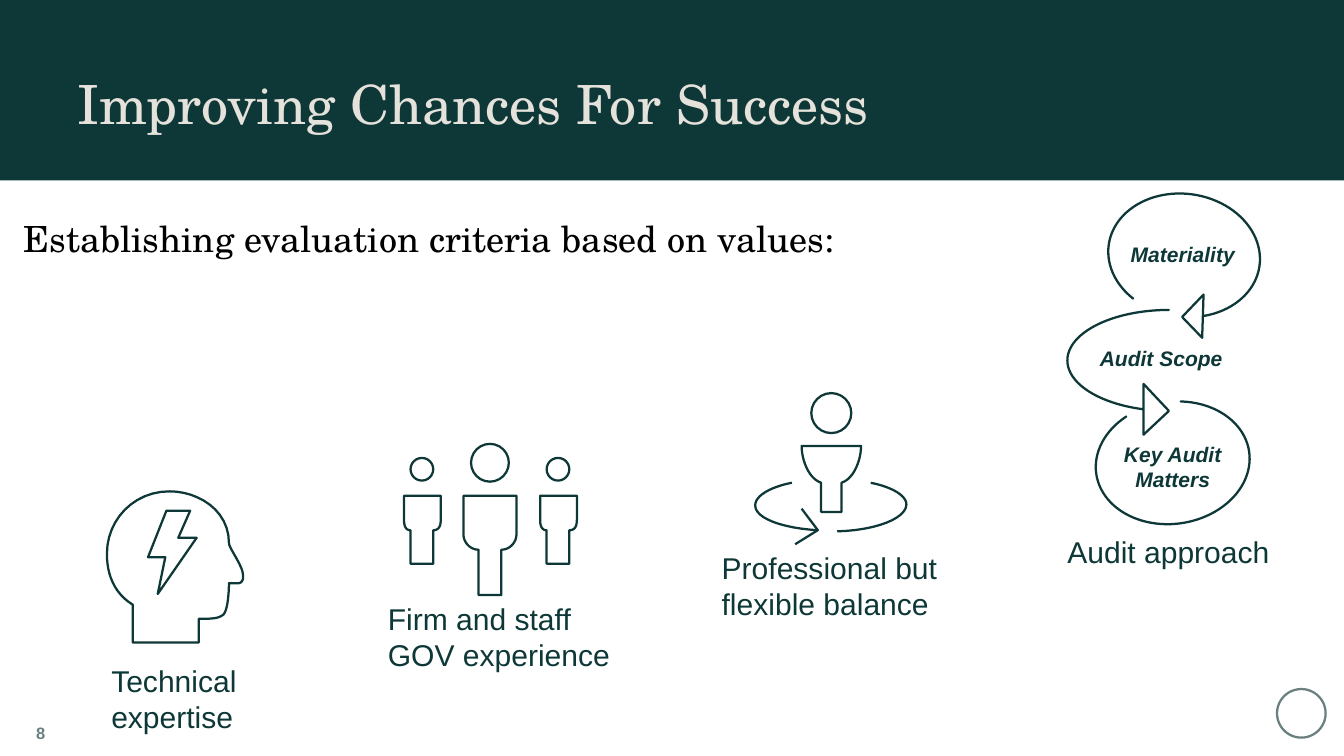
from dataclasses import dataclass, field

import pptx
import pptx.dml.color
import pptx.enum.shapes
import pptx.enum.text
import pptx.util

Inches = pptx.util.Inches
Pt = pptx.util.Pt
Preset = pptx.enum.shapes.MSO_SHAPE
Align = pptx.enum.text.PP_ALIGN
Anchor = pptx.enum.text.MSO_ANCHOR

GREEN, WHITE, GREY = "0E3837", "FFFFFF", "6A8080"
SERIF, SANS = "TeX Gyre Schola", "Arial"
CURVE_STEPS = 12


@dataclass
class Label:
    text: str
    frame: tuple[float, float, float, float]
    font: dict = field(default_factory=dict)
    color: str = GREEN
    paragraph: dict = field(default_factory=dict)
    anchor: Anchor = Anchor.TOP


@dataclass
class Outline:
    start: tuple[float, float]
    steps: list[tuple[float, ...]]
    closed: bool = True
    shift: float = 0


@dataclass
class Arrow:
    preset: Preset
    frame: tuple[float, float, float, float]
    adjustments: list[float]
    rotation: float = 0


def rgb(value: str) -> pptx.dml.color.RGBColor:
    return pptx.dml.color.RGBColor.from_string(value)


def apply(target, values: dict) -> None:
    for name, value in values.items():
        setattr(target, name, value)


def style(shape, fill: str | None, line: str | None, width: float = 1.5) -> None:
    shape.shadow.inherit = False
    if fill:
        shape.fill.solid()
        shape.fill.fore_color.rgb = rgb(fill)
    else:
        shape.fill.background()
    if line:
        shape.line.color.rgb = rgb(line)
        shape.line.width = Pt(width)
    else:
        shape.line.fill.background()


def draw_preset(page, preset: Preset, frame: tuple, fill: str | None,
                line: str | None, width: float = 1.5):
    shape = page.shapes.add_shape(preset, *map(Inches, frame))
    style(shape, fill, line, width)
    return shape


def draw_label(page, label: Label) -> None:
    box = page.shapes.add_textbox(*map(Inches, label.frame))
    margins = {f"margin_{side}": 0 for side in ("left", "top", "right", "bottom")}
    apply(box.text_frame, margins | {"word_wrap": True, "vertical_anchor": label.anchor})
    paragraph = box.text_frame.paragraphs[0]
    apply(paragraph, label.paragraph)
    span = paragraph.add_run()
    span.text = label.text
    apply(span.font, label.font)
    span.font.color.rgb = rgb(label.color)


def curve(start: tuple, step: tuple) -> list[tuple[float, float]]:
    points = [start, step[:2], step[2:4], step[4:]]
    result = []
    for index in range(1, CURVE_STEPS + 1):
        t = index / CURVE_STEPS
        weights = ((1 - t) ** 3, 3 * t * (1 - t) ** 2, 3 * t * t * (1 - t), t ** 3)
        result.append(tuple(sum(w * p[axis] for w, p in zip(weights, points))
                            for axis in (0, 1)))
    return result


def draw_outline(page, outline: Outline) -> None:
    points = [outline.start]
    for step in outline.steps:
        points += [step] if len(step) == 2 else curve(points[-1], step)
    scaled = [(Inches(x + outline.shift), Inches(y)) for x, y in points]
    builder = page.shapes.build_freeform(*scaled[0], scale=1.0)
    builder.add_line_segments(scaled[1:], close=outline.closed)
    style(builder.convert_to_shape(), None, GREEN)


def draw_arrow(page, arrow: Arrow) -> None:
    shape = draw_preset(page, arrow.preset, arrow.frame, WHITE, GREEN)
    for index, value in enumerate(arrow.adjustments):
        shape.adjustments[index] = value
    shape.rotation = arrow.rotation


CAPTION = {"size": Pt(20), "name": SANS}
LOOP_TEXT = {"size": Pt(14), "name": SANS, "bold": True, "italic": True}
SPACED = {"space_after": Pt(4)}

LABELS = [
    Label("Establishing evaluation criteria based on values:", (0.22, 2, 11.51, 0.58),
          {"size": Pt(24), "name": SERIF}, "000000",
          {"space_before": Pt(18), "space_after": Pt(12)}),
    Label("Improving Chances For Success", (0.72, 0.5, 11, 0.75),
          {"size": Pt(36), "name": SERIF}, "E5E1DB", anchor=Anchor.BOTTOM),
    Label("8", (0, 6.58, 0.42, 0.42), {"size": Pt(11), "name": SANS, "bold": True},
          GREY, {"alignment": Align.RIGHT}, Anchor.MIDDLE),
    Label("Technical expertise", (1.03, 6.13, 1.19, 0.66), CAPTION, paragraph=SPACED),
    Label("Firm and staff GOV experience", (3.59, 5.56, 2.26, 0.79), CAPTION,
          paragraph=SPACED),
    Label("Professional but flexible balance", (6.68, 5.09, 2.22, 0.76), CAPTION,
          paragraph=SPACED),
    Label("Audit approach", (9.88, 4.94, 1.97, 0.64), CAPTION, paragraph=SPACED),
]

LOOP_LABELS = [
    Label("Materiality", (10.02, 2.24, 1.41, 0.27), LOOP_TEXT,
          paragraph=SPACED | {"alignment": Align.RIGHT}),
    Label("Audit Scope", (10.18, 3.2, 1.41, 0.27), LOOP_TEXT, paragraph=SPACED),
    Label("Key Audit Matters", (10.15, 4.09, 1.41, 0.27), LOOP_TEXT,
          paragraph=SPACED | {"alignment": Align.CENTER}),
]

THINKER = [
    Outline((2.12, 5.03), [
        (2.12, 4.72, 1.83, 4.55, 1.57, 4.55), (1.24, 4.55, 0.99, 4.81, 0.99, 5.13),
        (0.99, 5.31, 1.05, 5.49, 1.23, 5.6), (1.23, 5.95), (1.84, 5.95), (1.84, 5.73),
        (1.96, 5.73, 2.02, 5.73, 2.07, 5.69), (2.12, 5.63, 2.12, 5.4, 2.12, 5.4),
        (2.12, 5.4, 2.17, 5.4, 2.21, 5.4), (2.22, 5.4, 2.24, 5.39, 2.24, 5.38),
        (2.25, 5.37, 2.25, 5.36, 2.25, 5.34), (2.26, 5.25, 2.12, 5.08, 2.12, 5.03)]),
    Outline((1.54, 4.73), [(1.76, 4.73), (1.65, 4.98), (1.82, 4.98), (1.46, 5.5),
                           (1.53, 5.16), (1.37, 5.16)]),
]

COLLEAGUE_GAP = 1.26
COLLEAGUE = [(3.74, 4.81), (3.74, 4.86, 3.75, 4.91, 3.8, 4.91), (3.8, 5.22),
             (4.01, 5.22), (4.01, 4.91), (4.07, 4.91, 4.08, 4.86, 4.08, 4.81),
             (4.08, 4.59)]
TEAM = [Outline((3.74, 4.59), COLLEAGUE, shift=shift) for shift in (0, COLLEAGUE_GAP)] + [
    Outline((4.29, 4.59), [
        (4.78, 4.59), (4.78, 4.95), (4.78, 5.02, 4.72, 5.09, 4.64, 5.09), (4.64, 5.51),
        (4.43, 5.51), (4.43, 5.09), (4.35, 5.09, 4.29, 5.02, 4.29, 4.95)]),
]

BALANCE = [
    Outline((7.97, 4.13), [
        (7.42, 4.13), (7.42, 4.25, 7.48, 4.43, 7.6, 4.47), (7.6, 4.74), (7.79, 4.74),
        (7.79, 4.47), (7.91, 4.43, 7.97, 4.25, 7.97, 4.13)]),
    Outline((7.57, 4.91), [(7.24, 4.89, 6.99, 4.8, 6.99, 4.68),
                           (6.99, 4.59, 7.13, 4.51, 7.33, 4.47)], closed=False),
    Outline((8.06, 4.47), [(8.26, 4.51, 8.39, 4.59, 8.39, 4.67),
                           (8.39, 4.8, 8.11, 4.91, 7.75, 4.92)], closed=False),
    Outline((7.42, 4.71), [(7.57, 4.91), (7.36, 5.04)], closed=False),
]

HEADS = [(3.8, 4.24, 0.21), (3.8 + COLLEAGUE_GAP, 4.24, 0.21), (4.36, 4.11, 0.35),
         (7.51, 3.64, 0.37)]

LOOPS = [
    Arrow(Preset.CURVED_RIGHT_ARROW, (9.88, 2.87, 0.94, 1.17), [0, 0.5, 0.25]),
    Arrow(Preset.BLOCK_ARC, (10.29, 3.57, 1.13, 1.43), [9.48, 194.02, 0], 261.6),
    Arrow(Preset.CIRCULAR_ARROW, (10.19, 1.46, 1.54, 1.81),
          [0, 11.42, 200.79, 24.97, 0.13], 98.2),
]


def main() -> None:
    deck = pptx.Presentation()
    apply(deck, {"slide_width": Inches(12.44), "slide_height": Inches(7)})
    page = deck.slides.add_slide(deck.slide_layouts[6])
    page.background.fill.solid()
    page.background.fill.fore_color.rgb = rgb(GREEN)
    draw_preset(page, Preset.RECTANGLE, (0, 1.67, 12.44, 5.33), WHITE, None)
    draw_preset(page, Preset.OVAL, (11.82, 6.38, 0.45, 0.45), None, GREY)
    for label in LABELS:
        draw_label(page, label)
    for outline in THINKER + TEAM + BALANCE:
        draw_outline(page, outline)
    for left, top, size in HEADS:
        draw_preset(page, Preset.OVAL, (left, top, size, size), None, GREEN)
    for loop in LOOPS:
        draw_arrow(page, loop)
    for label in LOOP_LABELS:
        draw_label(page, label)
    deck.save("out.pptx")


if __name__ == "__main__":
    main()
